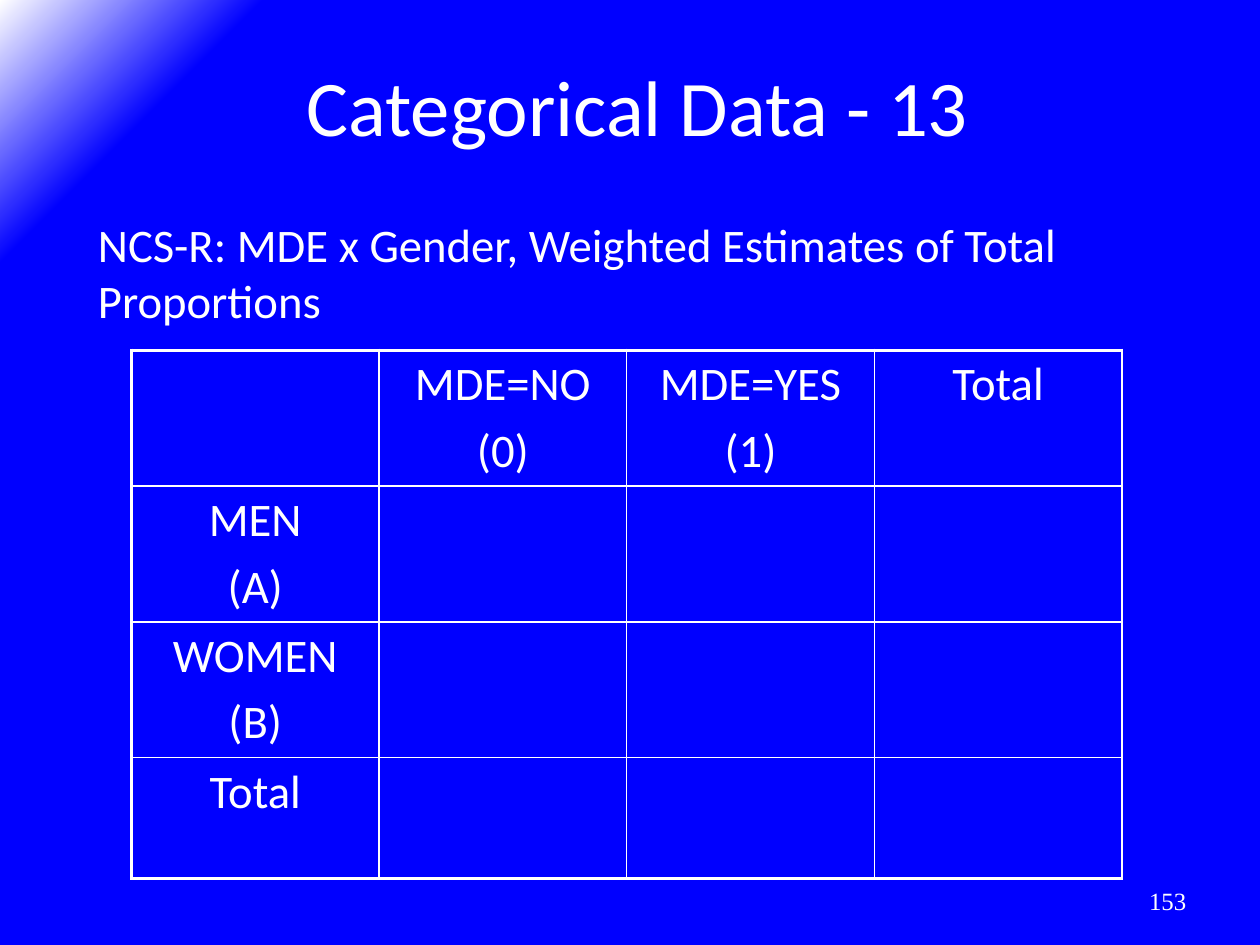
from lxml import etree
from pptx import Presentation
from pptx.dml.color import RGBColor
from pptx.enum import text
from pptx.oxml import ns, parse_xml
from pptx.util import Cm, Pt

WHITE = RGBColor(0xFF, 0xFF, 0xFF)
BLUE = RGBColor(0x00, 0x00, 0xFF)
ALIGN = text.PP_ALIGN


def style(para, size, align, font="Calibri"):
    para.alignment = align
    para.font.name = font
    para.font.size = Pt(size)
    para.font.color.rgb = WHITE


def fill_box(box, words, place, size, align, font="Calibri"):
    box.left, box.top, box.width, box.height = [Cm(length) for length in place]
    frame = box.text_frame
    frame.text = words
    frame.word_wrap = True
    frame.auto_size = text.MSO_AUTO_SIZE.NONE
    frame.vertical_anchor = text.MSO_ANCHOR.MIDDLE
    style(frame.paragraphs[0], size, align, font)


deck = Presentation()
deck.slide_width, deck.slide_height = Cm(30.48), Cm(22.86)
page = deck.slides.add_slide(deck.slide_layouts[5])

page.background.fill.solid()
background = page.element.find(".//" + ns.qn("p:bgPr"))
stops = "".join(
    f'<a:gs pos="{percent * 1000}"><a:srgbClr val="{color}"/></a:gs>'
    for percent, color in [(0, BLUE), (88, BLUE), (100, WHITE)]
)
background[0] = parse_xml(
    f'<a:gradFill {ns.nsdecls("a")} rotWithShape="0"><a:gsLst>{stops}</a:gsLst>'
    '<a:path path="circle"><a:fillToRect l="100000" t="100000"/></a:path></a:gradFill>'
)

fill_box(page.shapes.title, "Categorical Data - 13",
         (1.7, 0.64, 27.43, 3.81), 54, ALIGN.CENTER)
subtitle = page.shapes.add_textbox(0, 0, 0, 0)
fill_box(subtitle, "NCS-R: MDE x Gender, Weighted Estimates of Total Proportions",
         (2.12, 4.66, 25.9, 3.81), 32, ALIGN.LEFT)
page_number = page.shapes.add_textbox(0, 0, 0, 0)
fill_box(page_number, "153", (21.84, 21.18, 7.11, 1.22), 17, ALIGN.RIGHT, "Times New Roman")

labels = [
    ["", "MDE=NO\n(0)", "MDE=YES\n(1)", "Total"],
    ["MEN\n(A)", "", "", ""],
    ["WOMEN\n(B)", "", "", ""],
    ["Total", "", "", ""],
]
last = len(labels) - 1
table = page.shapes.add_table(4, 4, Cm(3.18), Cm(8.47), Cm(23.96), Cm(11.83)).table
table.first_row = table.horz_banding = False
for column in table.columns:
    column.width = Cm(5.99)
for row in table.rows:
    row.height = Cm(2.97)
table.rows[last].height = Cm(2.92)

for row_index, row_labels in enumerate(labels):
    for column_index, label in enumerate(row_labels):
        cell = table.cell(row_index, column_index)
        cell.margin_left = cell.margin_right = Cm(0.3)
        cell.margin_top = cell.margin_bottom = Cm(0.15)
        if label:
            cell.text = label
            for para_index, para in enumerate(cell.text_frame.paragraphs):
                style(para, 32, ALIGN.CENTER)
                para.space_before = Pt(6.4 if para_index else 0)
        outer_sides = {"lnL": column_index == 0, "lnR": column_index == last,
                       "lnT": row_index == 0, "lnB": row_index == last}
        properties = cell._tc.get_or_add_tcPr()
        for side, outer in outer_sides.items():
            line = etree.SubElement(properties, ns.qn("a:" + side), w=str(Pt(2.25 if outer else 1)))
            paint = etree.SubElement(line, ns.qn("a:solidFill"))
            etree.SubElement(paint, ns.qn("a:srgbClr"), val=str(WHITE))
        cell.fill.background()

deck.save("out.pptx")
